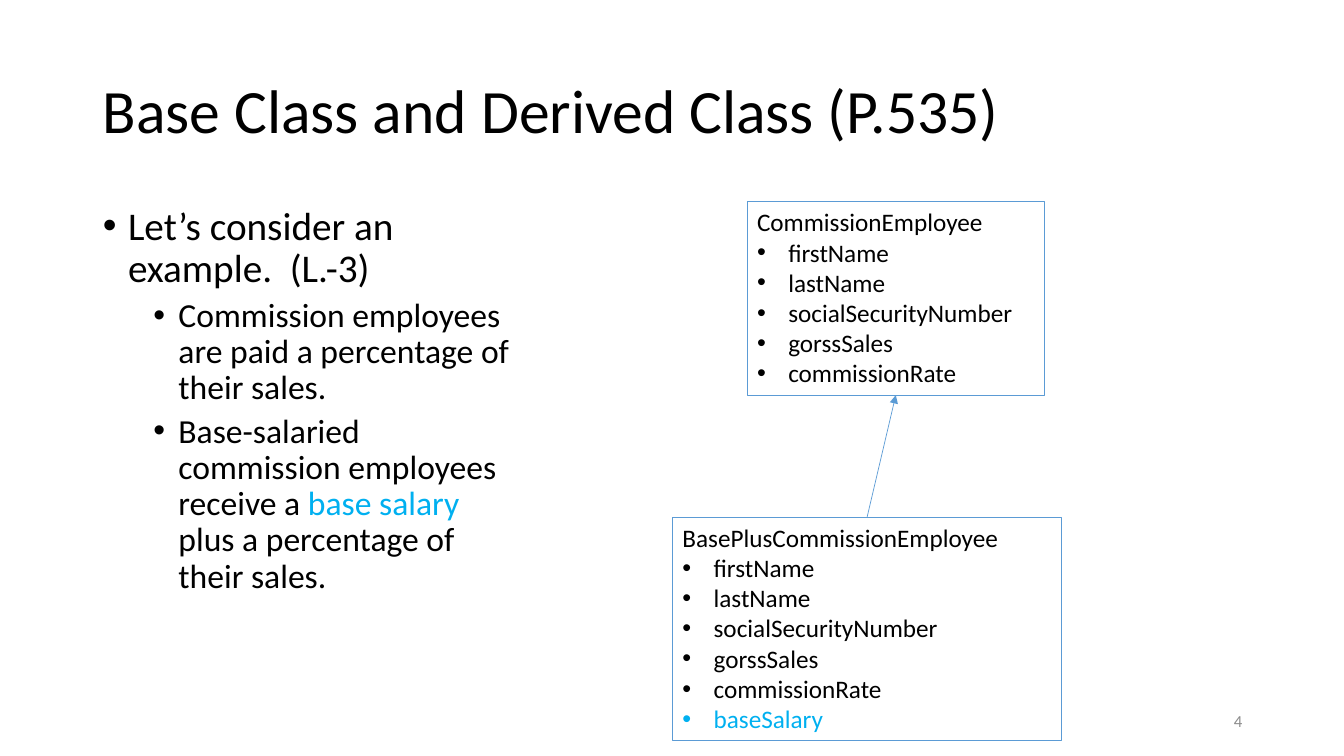
from pptx import Presentation
from pptx.dml.color import RGBColor
from pptx.enum.shapes import MSO_CONNECTOR, MSO_SHAPE
from pptx.enum.text import MSO_ANCHOR, MSO_AUTO_SIZE, PP_ALIGN
from pptx.oxml.ns import qn
from pptx.util import Inches, Pt
from lxml.etree import SubElement

BLACK, BLUE, CYAN, GRAY = "000000", "5B9BD5", "00B0F0", "8C8C8C"
FIELDS = ["firstName", "lastName", "socialSecurityNumber", "gorssSales", "commissionRate"]


def paint(color, code):
    color.rgb = RGBColor.from_string(code)


def place(shape, left, top, width, height):
    shape.left, shape.top = Inches(left), Inches(top)
    shape.width, shape.height = Inches(width), Inches(height)


def style(para, size, code=BLACK):
    para.font.name = "Calibri"
    para.font.size = Pt(size)
    paint(para.font.color, code)


def indent(para, left, hang):
    props = para._p.get_or_add_pPr()
    props.set("marL", str(Inches(left)))
    props.set("indent", str(-Inches(hang)))
    SubElement(props, qn("a:buFont"), typeface="Arial")
    SubElement(props, qn("a:buChar"), char="•")


def next_para(frame, first):
    return frame.paragraphs[0] if first else frame.add_paragraph()


def add_title(slide, text):
    title = slide.shapes.title
    place(title, 0.92, 0.4, 11.5, 1.45)
    frame = title.text_frame
    frame.text = text
    frame.auto_size = MSO_AUTO_SIZE.NONE
    frame.vertical_anchor = MSO_ANCHOR.MIDDLE
    para = frame.paragraphs[0]
    para.alignment = PP_ALIGN.LEFT
    para.line_spacing = 0.9
    style(para, 44)


def add_body(slide, items):
    body = slide.placeholders[1]
    place(body, 0.92, 2, 4.27, 4.24)
    frame = body.text_frame
    frame.auto_size = MSO_AUTO_SIZE.NONE
    for i, (level, parts) in enumerate(items):
        para = next_para(frame, i == 0)
        para.level = level
        para.line_spacing = 0.9
        para.space_before = Pt(5 if level else 10)
        indent(para, 0.25 + 0.5 * level, 0.25)
        style(para, 24 if level else 28)
        for text, code in parts:
            run = para.add_run()
            run.text = text
            if code != BLACK:
                paint(run.font.color, code)


def add_class(slide, box, name, fields):
    shape = slide.shapes.add_shape(MSO_SHAPE.RECTANGLE, 0, 0, 0, 0)
    place(shape, *box)
    shape.shadow.inherit = False
    shape.fill.background()
    paint(shape.line.color, BLUE)
    shape.line.width = Pt(0.75)
    frame = shape.text_frame
    frame.word_wrap = True
    frame.vertical_anchor = MSO_ANCHOR.TOP
    rows = [(name, BLACK)] + fields
    for i, (text, code) in enumerate(rows):
        para = next_para(frame, i == 0)
        para.text = text
        para.alignment = PP_ALIGN.LEFT
        if i:
            indent(para, 0.31, 0.31)
        style(para, 18, code)
    return shape


def add_arrow(slide, child, base):
    arrow = slide.shapes.add_connector(MSO_CONNECTOR.STRAIGHT, 0, 0, 0, 0)
    arrow.begin_connect(child, 0)
    arrow.end_connect(base, 2)
    paint(arrow.line.color, BLUE)
    arrow.line.width = Pt(0.5)
    SubElement(arrow.line._get_or_add_ln(), qn("a:tailEnd"), type="triangle")
    SubElement(arrow._element.spPr, qn("a:effectLst"))


def add_number(slide, text):
    box = slide.shapes.add_textbox(0, 0, 0, 0)
    place(box, 9.42, 6.95, 3, 0.4)
    frame = box.text_frame
    frame.word_wrap = True
    frame.vertical_anchor = MSO_ANCHOR.MIDDLE
    para = frame.paragraphs[0]
    para.text = text
    para.alignment = PP_ALIGN.RIGHT
    style(para, 12, GRAY)


def main():
    deck = Presentation()
    deck.slide_width, deck.slide_height = Inches(13.33), Inches(7.5)
    slide = deck.slides.add_slide(deck.slide_layouts[1])
    add_title(slide, "Base Class and Derived Class (P.535)")
    add_body(slide, [
        (0, [("Let’s consider an example.  (L.-3)", BLACK)]),
        (1, [("Commission employees are paid a percentage of their sales.", BLACK)]),
        (1, [("Base-salaried commission employees receive a ", BLACK),
             ("base salary", CYAN),
             (" plus a percentage of their sales.", BLACK)]),
    ])
    add_number(slide, "4")
    shared = [(field, BLACK) for field in FIELDS]
    base = add_class(slide, (7.41, 2, 2.95, 1.92), "CommissionEmployee", shared)
    child = add_class(slide, (6.67, 5.13, 3.86, 2.22), "BasePlusCommissionEmployee",
                      shared + [("baseSalary", CYAN)])
    add_arrow(slide, child, base)
    deck.save("out.pptx")


if __name__ == "__main__":
    main()
